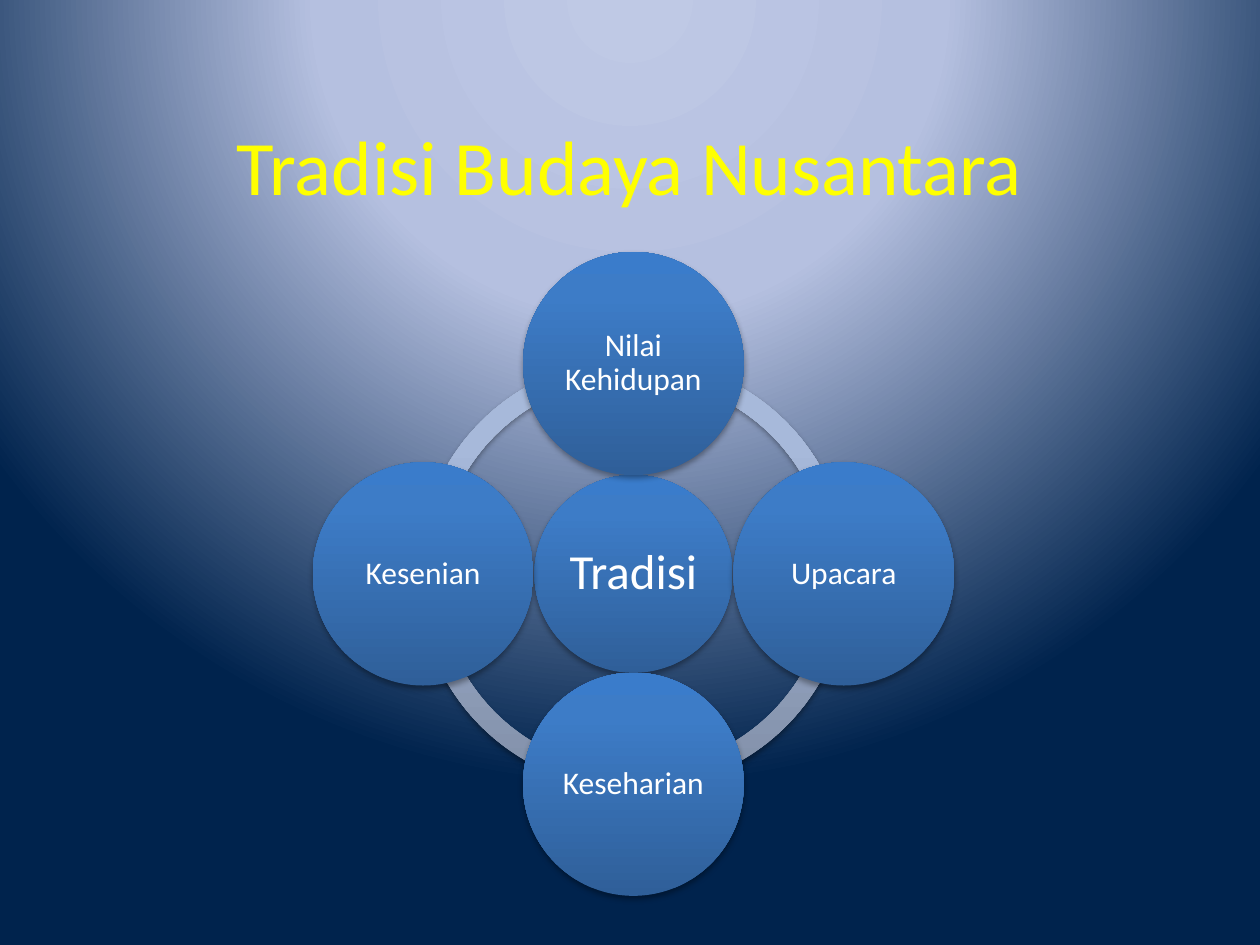
from dataclasses import dataclass
from math import cos, radians, sin

from lxml import etree
from pptx import Presentation
from pptx.dml.color import RGBColor
from pptx.enum.shapes import MSO_SHAPE
from pptx.enum.text import MSO_ANCHOR, PP_ALIGN
from pptx.oxml import parse_xml
from pptx.oxml.ns import nsdecls
from pptx.shapes.autoshape import Shape
from pptx.text.text import TextFrame
from pptx.util import Cm, Pt

ARC, DISC = MSO_SHAPE.BLOCK_ARC, MSO_SHAPE.OVAL
MIDDLE, CENTER = MSO_ANCHOR.MIDDLE, PP_ALIGN.CENTER

COLORS = {
    "title": "FFFF00", "label": "FFFFFF", "shade": "000000",
    "glow": "BFC9E5", "haze": "B5C0E0", "night": "00234D",
    "ring low": "818FA8", "ring mid": "A7B9DA", "ring top": "A7BADC",
    "disc low": "2F5F99", "disc mid": "3D7CC7", "disc top": "3A7CCB",
}
SKY = ((0, "glow"), (40, "haze"), (100, "night"))
RING = ((0, "ring low"), (80, "ring mid"), (100, "ring top"))
BALL = ((0, "disc low"), (80, "disc mid"), (100, "disc top"))
UPWARD = '<a:lin {} ang="16200000" scaled="0"/>'
RADIAL = ('<a:path {} path="circle"><a:fillToRect l="50000" t="-80000" '
          'r="50000" b="180000"/></a:path>')

# Wheel layout in cm
MID_X, MID_Y = 12.77, 11.57
ORBIT = 4.24
RING_SIZE = 8.69
RING_WIDTH = 0.046


@dataclass
class Disc:
    text: str
    x: float
    y: float
    width: float
    height: float
    size: int
    inset: float


def paint(root: etree._Element, stops: tuple, course: str) -> None:
    """Give the gradient found under root its stops and its course."""
    grad = root.xpath(".//a:gradFill")[0]
    for child in list(grad):
        grad.remove(child)
    marks = "".join(
        f'<a:gs pos="{at * 1000}"><a:srgbClr val="{COLORS[name]}"/></a:gs>'
        for at, name in stops)
    space = nsdecls("a")
    grad.append(parse_xml(f"<a:gsLst {space}>{marks}</a:gsLst>"))
    grad.append(parse_xml(course.format(space)))


def add_shape(slide, kind: MSO_SHAPE, x: float, y: float, width: float,
              height: float, stops: tuple) -> Shape:
    """Add a shaded shape centred on x, y."""
    shape = slide.shapes.add_shape(kind, Cm(x - width / 2), Cm(y - height / 2),
                                   Cm(width), Cm(height))
    shape.fill.gradient()
    paint(shape.element, stops, UPWARD)
    shape.line.fill.background()
    shape.shadow.inherit = False
    shape.element.xpath(".//a:effectLst")[0].append(parse_xml(
        f'<a:outerShdw {nsdecls("a")} blurRad="40000" dist="23000" '
        f'dir="5400000" rotWithShape="0"><a:srgbClr val="{COLORS["shade"]}">'
        '<a:alpha val="35000"/></a:srgbClr></a:outerShdw>'))
    return shape


def write(frame: TextFrame, text: str, size: int, color: str,
          spacing: float = 1.0, **margins: int) -> None:
    """Write one centred line of text."""
    frame.text = text
    para = frame.paragraphs[0]
    formats = (
        (frame, {"word_wrap": True, "vertical_anchor": MIDDLE, **margins}),
        (para, {"alignment": CENTER, "line_spacing": spacing}),
        (para.runs[0].font, {"name": "Calibri", "size": Pt(size)}),
    )
    for target, values in formats:
        for key, value in values.items():
            setattr(target, key, value)
    para.runs[0].font.color.rgb = RGBColor.from_string(COLORS[color])


def add_disc(slide, disc: Disc) -> None:
    shape = add_shape(slide, DISC, disc.x, disc.y, disc.width, disc.height, BALL)
    sides = ("left", "top", "right", "bottom")
    margins = {f"margin_{side}": Cm(disc.inset) for side in sides}
    write(shape.text_frame, disc.text, disc.size, "label", 0.9, **margins)


def main() -> None:
    deck = Presentation()
    deck.slide_width, deck.slide_height = Cm(25.4), Cm(19.05)
    slide = deck.slides.add_slide(deck.slide_layouts[6])

    # Background
    slide.background.fill.gradient()
    paint(slide.element, SKY, RADIAL)

    # Title
    box = slide.shapes.add_textbox(Cm(1.9), Cm(1.73), Cm(21.59), Cm(3.2))
    write(box.text_frame, "Tradisi Budaya Nusantara", 44, "title")

    # Ring of four quarter arcs
    for start, end in ((108, 162), (54, 108), (0, 54), (162, 0)):
        arc = add_shape(slide, ARC, MID_X, MID_Y, RING_SIZE, RING_SIZE, RING)
        for index, value in enumerate((start, end, RING_WIDTH)):
            arc.adjustments[index] = value

    # Hub, then the outer discs clockwise from the top
    add_disc(slide, Disc("Tradisi", MID_X, MID_Y, 3.99, 3.99, 28, 0.1))
    names = ("Nilai Kehidupan", "Upacara", "Keseharian", "Kesenian")
    for index, name in enumerate(names):
        turn = radians(index * 360 / len(names) - 90)
        add_disc(slide, Disc(name, MID_X + ORBIT * cos(turn),
                             MID_Y + ORBIT * sin(turn), 4.45, 4.5, 18, 0.08))

    deck.save("out.pptx")


if __name__ == "__main__":
    main()
